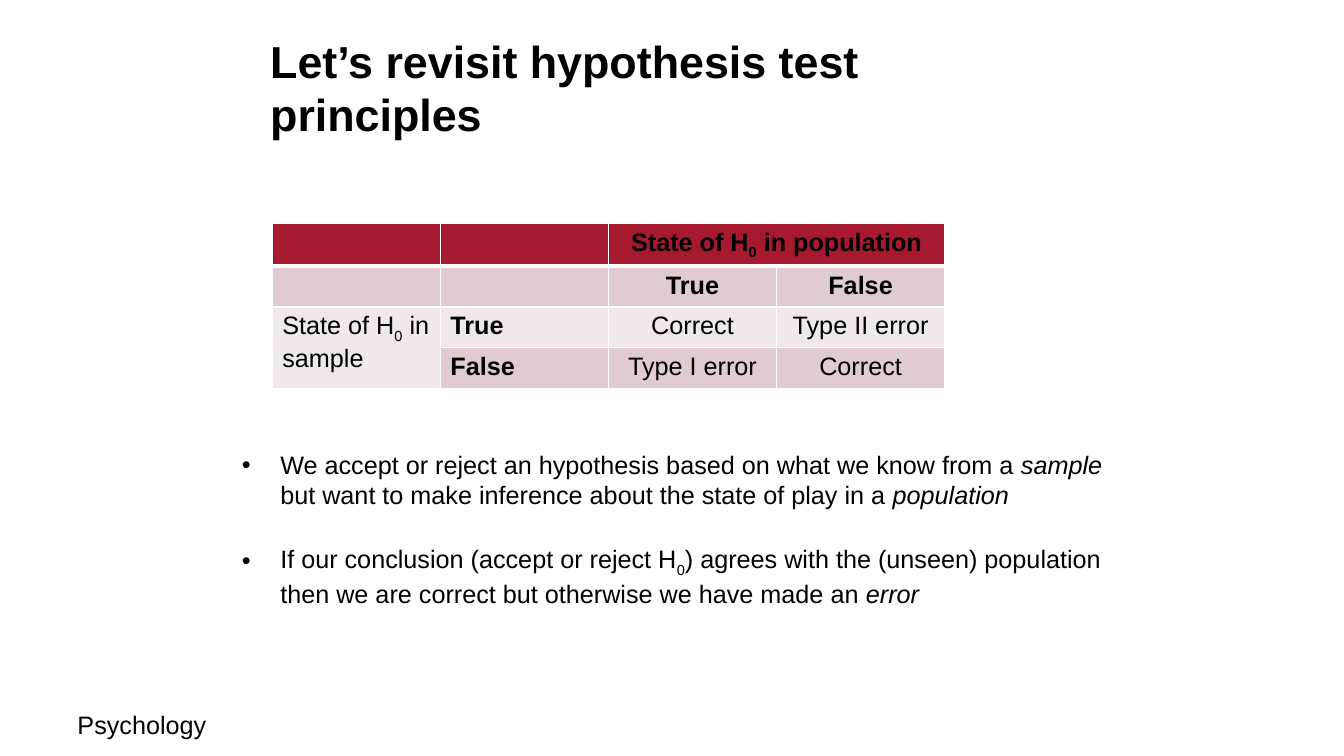
from lxml.etree import SubElement
from pptx import Presentation
from pptx.dml.color import RGBColor
from pptx.enum.text import MSO_ANCHOR, MSO_AUTO_SIZE, PP_ALIGN
from pptx.oxml.ns import qn
from pptx.util import Inches, Pt

BLACK = RGBColor(0x00, 0x00, 0x00)
WHITE = RGBColor(0xFF, 0xFF, 0xFF)
CRIMSON = RGBColor(0xA6, 0x19, 0x2E)
ROSE = RGBColor(0xE1, 0xCC, 0xCD)
PALE_ROSE = RGBColor(0xF1, 0xE8, 0xE8)

ROW_FILLS = [CRIMSON, ROSE, PALE_ROSE, ROSE]
OUTCOMES = [
    ["", "", [("State of H", ""), ("0", "sub"), (" in population", "")], ""],
    ["", "", [("True", "")], [("False", "")]],
    [[("State of H", ""), ("0", "sub"), (" in sample", "")],
     [("True", "")], [("Correct", "")], [("Type II error", "")]],
    ["", [("False", "")], [("Type I error", "")], [("Correct", "")]],
]
POINTS = [
    [("We accept or reject an hypothesis based on what we know from a ", ""),
     ("sample", "italic"),
     (" but want to make inference about the state of play in a ", ""),
     ("population", "italic")],
    [("If our conclusion (accept or reject H", ""), ("0", "sub"),
     (") agrees with the (unseen) population then we are correct "
      "but otherwise we have made an ", ""),
     ("error", "italic")],
]


def add_runs(paragraph, runs, size=18, bold=False):
    """Add (text, style) runs to a paragraph in black Arial."""
    for text, style in runs:
        run = paragraph.add_run()
        run.text = text
        font = run.font
        font.name, font.size, font.bold = "Arial", Pt(size), bold
        font.italic = style == "italic"
        font.color.rgb = BLACK
        if style == "sub":
            run._r.get_or_add_rPr().set("baseline", "-25000")


def place(shape, left, top, width, height):
    """Move a placeholder to a box given in inches."""
    shape.left, shape.top = Inches(left), Inches(top)
    shape.width, shape.height = Inches(width), Inches(height)
    shape.text_frame.word_wrap = True
    shape.text_frame.auto_size = MSO_AUTO_SIZE.NONE
    shape.text_frame.vertical_anchor = MSO_ANCHOR.TOP


def fill_title(title, *box):
    """Write the slide title into its box."""
    place(title, *box)
    heading = title.text_frame.paragraphs[0]
    heading.alignment = PP_ALIGN.LEFT
    add_runs(heading, [("Let’s revisit hypothesis test principles", "")], 32, True)


def fill_points(body, *box):
    """Write the bulleted points into their box."""
    place(body, *box)
    frame = body.text_frame
    for index, runs in enumerate(POINTS):
        point = frame.add_paragraph() if index else frame.paragraphs[0]
        properties = point._p.get_or_add_pPr()
        properties.set("marL", str(Inches(0.38)))
        properties.set("indent", str(-Inches(0.38)))
        SubElement(properties, qn("a:buFont")).set("typeface", "Arial")
        SubElement(properties, qn("a:buChar")).set("char", "•")
        point.space_before = Pt(24 if index else 0)
        add_runs(point, runs)


def add_borders(cell, top, bottom):
    """Draw white borders round a cell, ahead of its fill."""
    properties = cell._tc.get_or_add_tcPr()
    sides = {"a:lnL": 1, "a:lnR": 1, "a:lnT": top, "a:lnB": bottom}
    for position, (side, points) in enumerate(sides.items()):
        line = SubElement(properties, qn(side), w=str(Pt(points)))
        solid = SubElement(line, qn("a:solidFill"))
        SubElement(solid, qn("a:srgbClr"), val=str(WHITE))
        properties.insert(position, line)


def add_outcome_table(slide, left, top, width, height):
    """Add the table of test outcomes in its box."""
    table = slide.shapes.add_table(
        4, 4, Inches(left), Inches(top), Inches(width), Inches(height)).table
    for r, row in enumerate(OUTCOMES):
        for c, runs in enumerate(row):
            cell = table.cell(r, c)
            cell.fill.solid()
            cell.fill.fore_color.rgb = ROW_FILLS[r]
            add_borders(cell, 3 if r == 1 else 1, 3 if r == 0 else 1)
            label = cell.text_frame.paragraphs[0]
            label.alignment = PP_ALIGN.CENTER if c > 1 else PP_ALIGN.LEFT
            add_runs(label, runs, bold=r < 2 or c == 1)
    table.cell(0, 2).merge(table.cell(0, 3))
    table.cell(2, 0).merge(table.cell(3, 0))


def add_department(slide, left, top, width, height):
    """Add the department name at the foot of the slide."""
    department = slide.shapes.add_textbox(
        Inches(left), Inches(top), Inches(width), Inches(height))
    department.text_frame.word_wrap = True
    add_runs(department.text_frame.paragraphs[0], [("Psychology", "")])


def main():
    """Build the slide and save it."""
    deck = Presentation()
    deck.slide_width, deck.slide_height = Inches(13.33), Inches(7.5)
    slide = deck.slides.add_slide(deck.slide_layouts[1])
    fill_title(slide.shapes.title, 2.58, 0.28, 6.92, 1.39)
    fill_points(slide.placeholders[1], 2.3, 4.41, 9, 1.92)
    add_outcome_table(slide, 2.7, 2.22, 6.67, 1.62)
    add_department(slide, 0.67, 6.99, 5.88, 0.4)
    deck.save("out.pptx")


if __name__ == "__main__":
    main()
